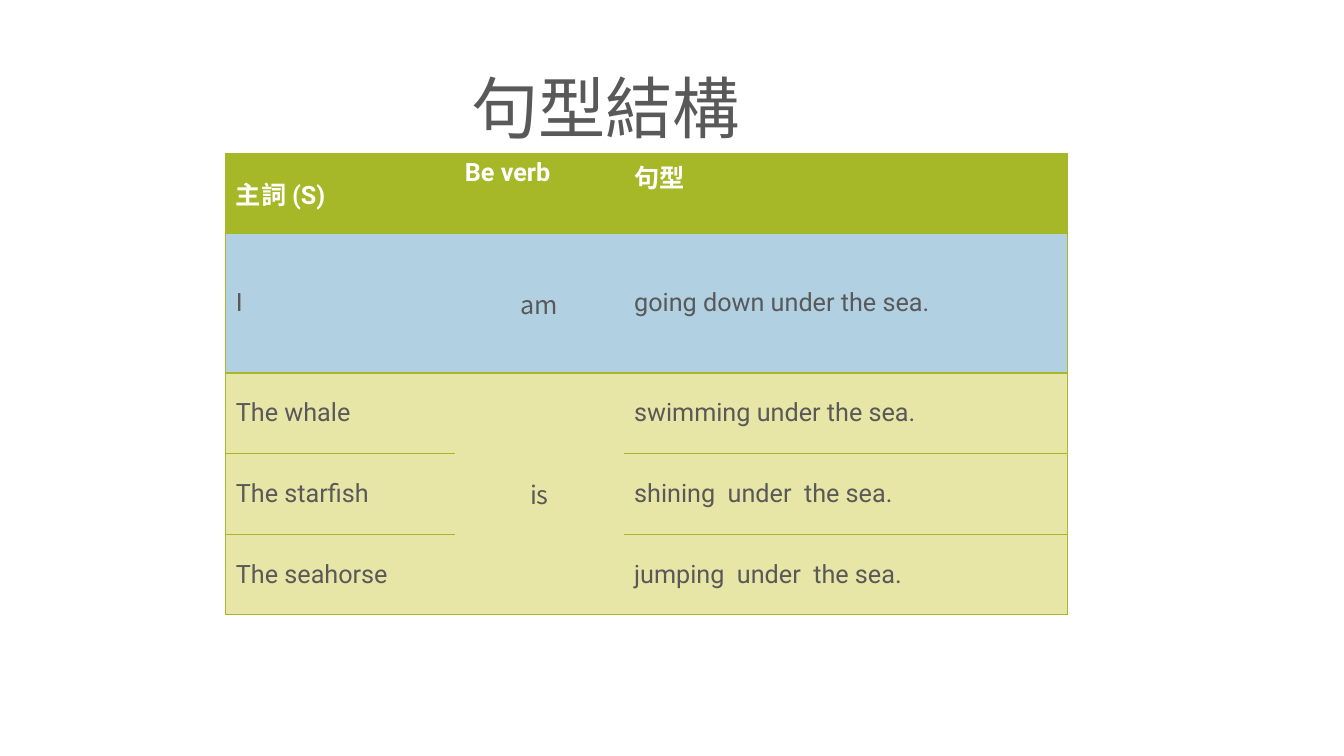
from dataclasses import dataclass

from lxml.etree import SubElement
from pptx import Presentation
from pptx.dml.color import RGBColor
from pptx.enum.text import MSO_ANCHOR as Anchor, PP_ALIGN as Align
from pptx.oxml.ns import qn
from pptx.util import Inches, Pt


@dataclass(frozen=True)
class Theme:
    text: str = "595959"
    white: str = "FFFFFF"
    green: str = "A6B727"
    blue: str = "B1D1E3"
    cream: str = "E8E6A7"
    latin: str = "Roboto"
    chinese: str = "Noto Sans CJK SC"
    title_size: int = 48
    table_size: int = 18
    border: int = 1


HEADERS = ["主詞 (S)", "Be verb", "句型"]
SENTENCES = [
    ["I", "am", "going down under the sea."],
    ["The whale", "is", "swimming under the sea."],
    ["The starfish", "", "shining  under  the sea."],
    ["The seahorse", "", "jumping  under  the sea."],
]
COLUMN_WIDTHS = [2.27, 1.68, 4.4]
ROW_HEIGHTS = [0.8, 1.38, 0.8, 0.8, 0.8]
VERB_COLUMN = 1
FIRST_IS_ROW = 2


class SlideBuilder:
    def __init__(self, deck, theme):
        self.theme = theme
        self.slide = deck.slides.add_slide(deck.slide_layouts[6])

    def style_text(self, para, size, color, face, bold=False):
        for span in para.runs:
            font = span.font
            font.size, font.bold, font.name = Pt(size), bold, face
            font.color.rgb = RGBColor.from_string(color)
            east_asian = SubElement(span._r.get_or_add_rPr(), qn("a:ea"))
            east_asian.set("typeface", self.theme.chinese)

    def add_title(self, text, left, top, width, height):
        box = self.slide.shapes.add_textbox(
            Inches(left), Inches(top), Inches(width), Inches(height))
        frame = box.text_frame
        frame.word_wrap = True
        frame.vertical_anchor = Anchor.BOTTOM
        frame.text = text
        para = frame.paragraphs[0]
        para.alignment = Align.CENTER
        para.line_spacing = 0.9
        self.style_text(para, self.theme.title_size, self.theme.text, self.theme.chinese)

    def set_borders(self, cell, shown):
        """Draw the sides named in shown (L, R, T, B) and hide the others."""
        properties = cell._tc.get_or_add_tcPr()
        for side in "LRTB":
            line = SubElement(properties, qn(f"a:ln{side}"))
            if side in shown:
                line.set("w", str(Pt(self.theme.border)))
                fill = SubElement(line, qn("a:solidFill"))
                SubElement(fill, qn("a:srgbClr")).set("val", self.theme.green)
            else:
                SubElement(line, qn("a:noFill"))

    def style_cell(self, cell, row, column):
        theme = self.theme
        header = row == 0
        verb = column == VERB_COLUMN
        self.set_borders(cell, "" if cell.is_spanned else ("LTB", "TB", "RTB")[column])
        cell.fill.solid()
        fill = theme.green if header else theme.blue if row == 1 else theme.cream
        cell.fill.fore_color.rgb = RGBColor.from_string(fill)
        cell.vertical_anchor = Anchor.TOP if header and column else Anchor.MIDDLE
        para = cell.text_frame.paragraphs[0]
        para.alignment = Align.CENTER if verb and not header else Align.LEFT
        self.style_text(para, theme.table_size,
                        theme.white if header else theme.text,
                        theme.chinese if verb and not header else theme.latin,
                        bold=header)

    def add_sentence_table(self, left, top):
        rows = [HEADERS, *SENTENCES]
        table = self.slide.shapes.add_table(
            len(rows), len(HEADERS), Inches(left), Inches(top),
            Inches(sum(COLUMN_WIDTHS)), Inches(sum(ROW_HEIGHTS))).table
        for column, width in zip(table.columns, COLUMN_WIDTHS):
            column.width = Inches(width)
        for row, height in zip(table.rows, ROW_HEIGHTS):
            row.height = Inches(height)
        table.cell(FIRST_IS_ROW, VERB_COLUMN).merge(
            table.cell(len(rows) - 1, VERB_COLUMN))
        for row, texts in enumerate(rows):
            for column, text in enumerate(texts):
                cell = table.cell(row, column)
                if not cell.is_spanned:
                    cell.text_frame.text = text
                self.style_cell(cell, row, column)


def main():
    deck = Presentation()
    deck.slide_width, deck.slide_height = Inches(13.33), Inches(7.5)
    builder = SlideBuilder(deck, Theme())
    builder.add_title("句型結構", 0.88, 0.21, 10.25, 1.31)
    builder.add_sentence_table(2.24, 1.52)
    deck.save("out.pptx")


if __name__ == "__main__":
    main()
